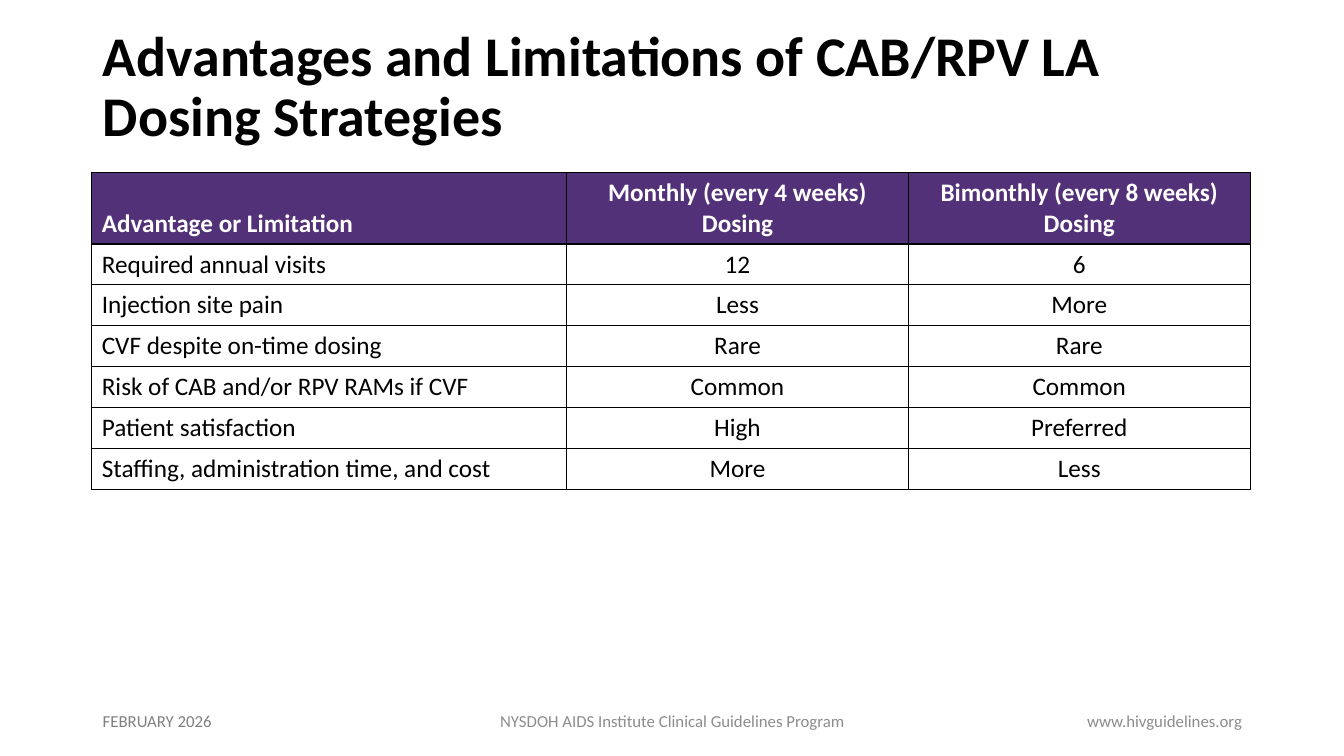
import pptx
import pptx.util
import pptx.dml.color
import pptx.enum.text
import pptx.oxml
import pptx.oxml.ns

PX = 9144  # EMU per px, 100 px to the inch
COLORS = {
    "ink": "000000",
    "paper": "FFFFFF",
    "header": "523178",
    "footer": "8C8C8C",
    "date": "808080",
}
ALIGN = pptx.enum.text.PP_ALIGN
ANCHOR = pptx.enum.text.MSO_ANCHOR

TITLE = "Advantages and Limitations of CAB/RPV LA Dosing Strategies"
DOSING_ROWS = [
    ("Advantage or Limitation", "Monthly (every 4 weeks) Dosing", "Bimonthly (every 8 weeks) Dosing"),
    ("Required annual visits", "12", "6"),
    ("Injection site pain", "Less", "More"),
    ("CVF despite on-time dosing", "Rare", "Rare"),
    ("Risk of CAB and/or RPV RAMs if CVF", "Common", "Common"),
    ("Patient satisfaction", "High", "Preferred"),
    ("Staffing, administration time, and cost", "More", "Less"),
]
COLUMN_WIDTHS = (471, 339, 339)
HEADER_HEIGHT, ROW_HEIGHT = 71, 40


def emu(box):
    return [length * PX for length in box]


def rgb(name):
    return pptx.dml.color.RGBColor.from_string(COLORS[name])


def write(frame, text, color, align=ALIGN.LEFT, **font_format):
    para = frame.paragraphs[0]
    para.alignment = align
    span = para.add_run()
    span.text = text
    for name, value in {"name": "Calibri", **font_format}.items():
        setattr(span.font, name, value)
    span.font.color.rgb = rgb(color)
    return para


def add_title(page, box):
    title = page.shapes.title
    for name, length in zip(("left", "top", "width", "height"), emu(box)):
        setattr(title, name, length)
    frame = title.text_frame
    frame.auto_size = pptx.enum.text.MSO_AUTO_SIZE.NONE
    frame.vertical_anchor = ANCHOR.MIDDLE
    para = write(frame, TITLE, "ink", size=pptx.util.Pt(40), bold=True)
    para.line_spacing = 0.9


def add_borders(cell):
    """Draw a 1 pt line on each side; the lines must precede the cell's fill."""
    properties = cell._tc.get_or_add_tcPr()
    for index, side in enumerate(("lnL", "lnR", "lnT", "lnB")):
        line = pptx.oxml.parse_xml(
            f'<a:{side} {pptx.oxml.ns.nsdecls("a")} w="12700"><a:solidFill>'
            f'<a:srgbClr val="{COLORS["ink"]}"/></a:solidFill></a:{side}>'
        )
        properties.insert(index, line)


def add_dosing_table(page, box):
    table = page.shapes.add_table(len(DOSING_ROWS), len(COLUMN_WIDTHS), *emu(box)).table
    for column, width in zip(table.columns, COLUMN_WIDTHS):
        column.width = width * PX
    for row_index, texts in enumerate(DOSING_ROWS):
        header = row_index == 0
        table.rows[row_index].height = (HEADER_HEIGHT if header else ROW_HEIGHT) * PX
        for column_index, text in enumerate(texts):
            cell = table.cell(row_index, column_index)
            cell.vertical_anchor = ANCHOR.BOTTOM if header else ANCHOR.TOP
            cell.fill.solid()
            cell.fill.fore_color.rgb = rgb("header" if header else "paper")
            add_borders(cell)
            write(
                cell.text_frame,
                text,
                "paper" if header else "ink",
                ALIGN.CENTER if column_index else ALIGN.LEFT,
                size=pptx.util.Pt(18),
                bold=header,
            )


def add_footer(page, box):
    left, top, width, height = box
    side, middle = 300, 450
    parts = [
        (left, side, "FEBRUARY 2026", "date", ALIGN.LEFT),
        (left + (width - middle) // 2, middle,
         "NYSDOH AIDS Institute Clinical Guidelines Program", "footer", ALIGN.CENTER),
        (left + width - side, side, "www.hivguidelines.org", "footer", ALIGN.RIGHT),
    ]
    for part_left, part_width, text, color, align in parts:
        part = page.shapes.add_textbox(*emu((part_left, top, part_width, height)))
        part.text_frame.word_wrap = True
        part.text_frame.vertical_anchor = ANCHOR.MIDDLE
        write(part.text_frame, text, color, align, size=pptx.util.Pt(12))


def main():
    deck = pptx.Presentation()
    deck.slide_width, deck.slide_height = emu((1333, 750))
    title_only = deck.slide_layouts[5]
    page = deck.slides.add_slide(title_only)
    add_title(page, (92, 15, 1063, 145))
    table_height = HEADER_HEIGHT + ROW_HEIGHT * (len(DOSING_ROWS) - 1)
    add_dosing_table(page, (91, 171, sum(COLUMN_WIDTHS), table_height))
    add_footer(page, (92, 695, 1150, 40))
    deck.save("out.pptx")


if __name__ == "__main__":
    main()
